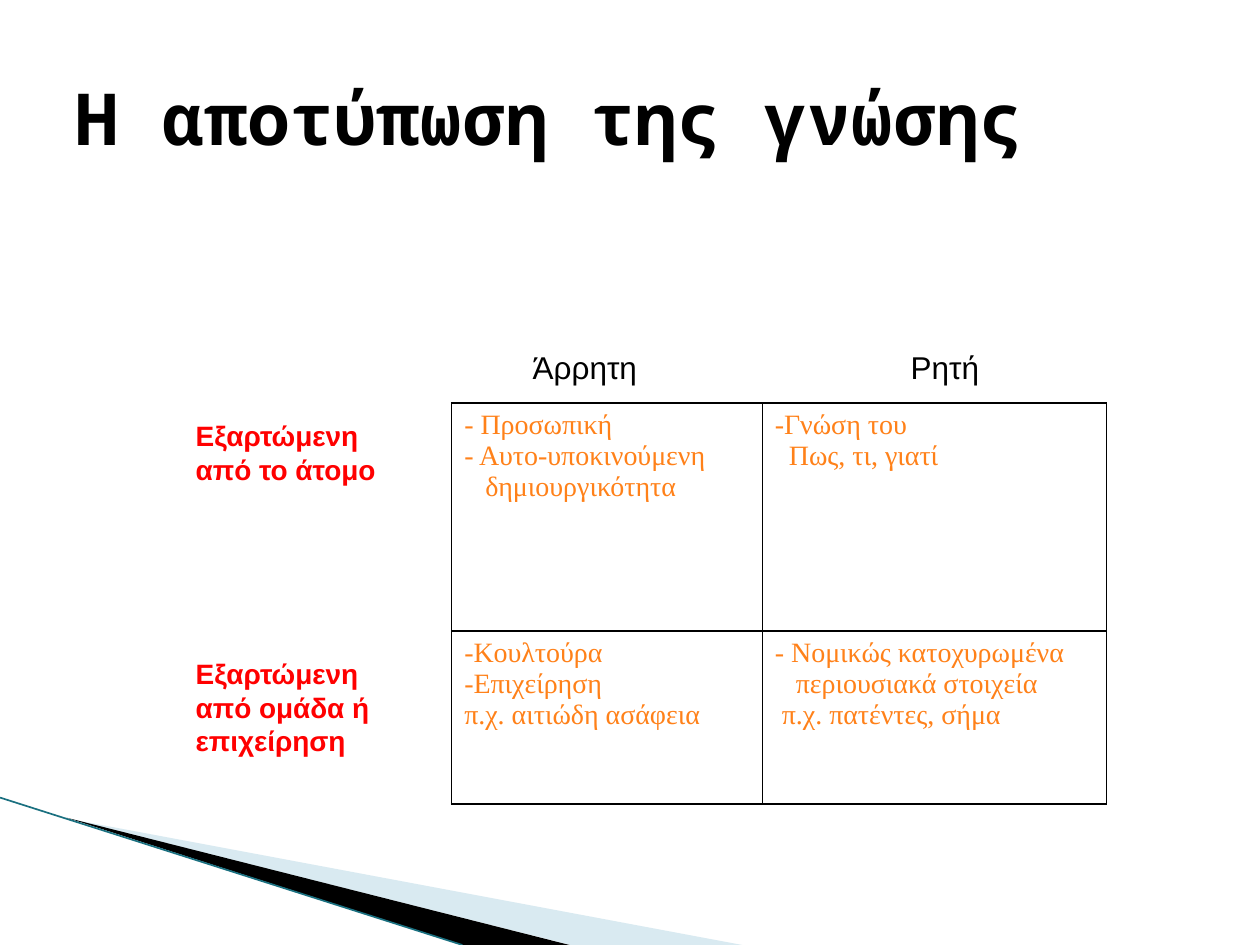
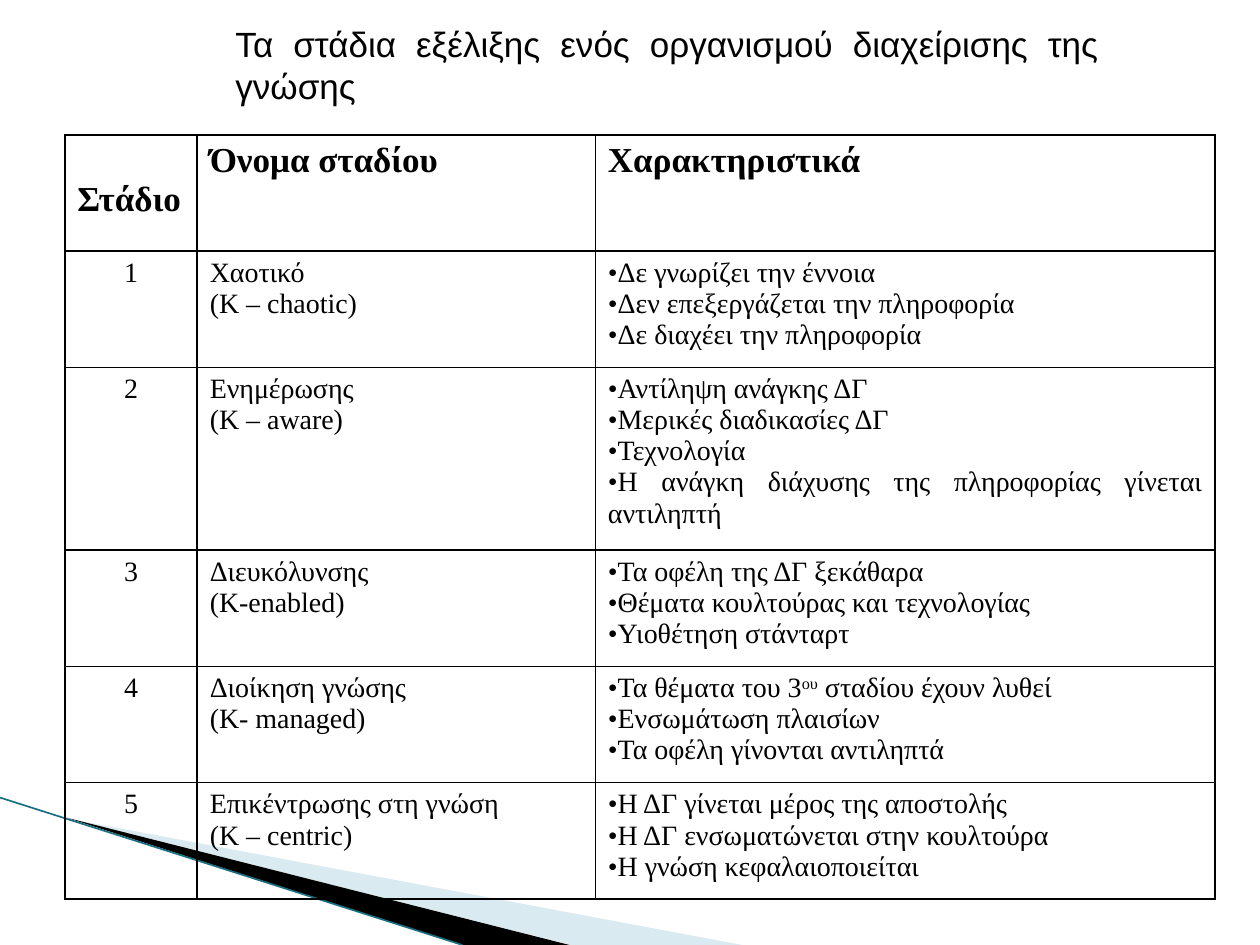
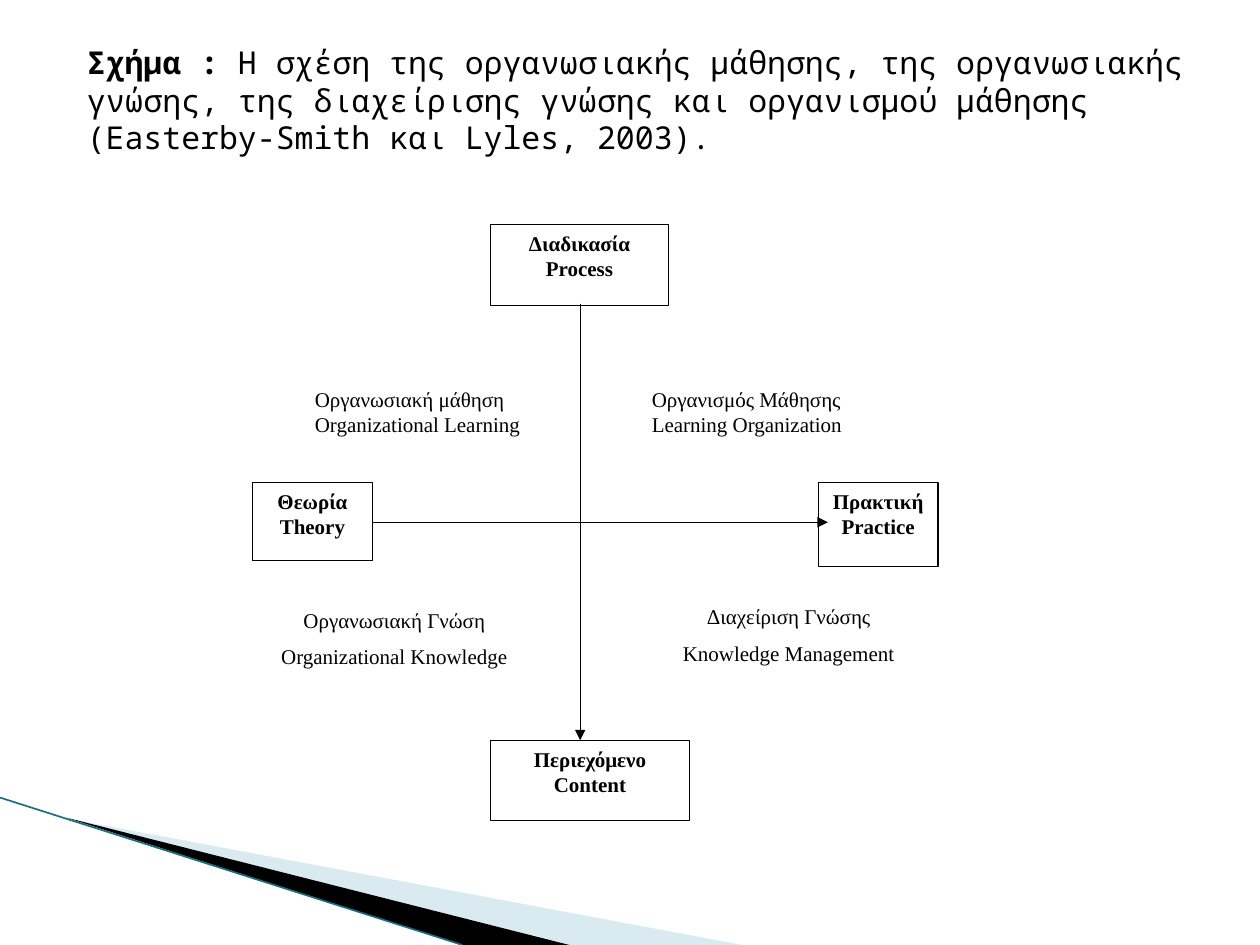
"""Build three slides on recorded knowledge, its stages and its relations."""
from dataclasses import dataclass, replace
from typing import Sequence

from lxml import etree
from pptx import Presentation
from pptx.dml.color import RGBColor
from pptx.enum.shapes import MSO_CONNECTOR, MSO_SHAPE
from pptx.enum.text import MSO_ANCHOR, PP_ALIGN
from pptx.oxml.ns import qn
from pptx.util import Inches, Pt

WIDE, HIGH = Inches(10), Inches(7.5)
COL, ROW = WIDE / 100, HIGH / 75

BLACK = RGBColor(0, 0, 0)
WHITE = RGBColor(255, 255, 255)
RED = RGBColor(255, 0, 0)
ORANGE = RGBColor(0xFF, 0x81, 0x19)
PALE = RGBColor(0xA0, 0xCB, 0xDC)
TEAL = RGBColor(0x1A, 0x70, 0x80)

LEFT, MID, JUST = PP_ALIGN.LEFT, PP_ALIGN.CENTER, PP_ALIGN.JUSTIFY
TOP, CORE, BASE = MSO_ANCHOR.TOP, MSO_ANCHOR.MIDDLE, MSO_ANCHOR.BOTTOM
RECT, STRAIGHT = MSO_SHAPE.RECTANGLE, MSO_CONNECTOR.STRAIGHT
SANS, MONO, SERIF = "Arial", "Noto Sans Mono", "Times New Roman"


@dataclass(frozen=True)
class Look:
    """Font and alignment of a text."""
    size: float
    face: str
    color: RGBColor = BLACK
    bold: bool = False
    align: PP_ALIGN = LEFT


@dataclass(frozen=True)
class Line:
    """One paragraph; text between carets is raised."""
    text: str
    mark: str = ""
    inset: float = 0
    gap: float = 0


@dataclass(frozen=True)
class Area:
    """Place on the grid of 100 columns and 75 rows."""
    x: float
    y: float
    w: float
    h: float

    def emu(self) -> tuple:
        """Give left, top, width and height."""
        return (round(self.x * COL), round(self.y * ROW),
                round(self.w * COL), round(self.h * ROW))


@dataclass(frozen=True)
class Note:
    """Text with its place."""
    area: Area
    lines: tuple
    look: Look
    anchor: MSO_ANCHOR = TOP
    edge: bool = False


HEAD = Look(41, MONO, bold=True)
SIDE = Look(16, SANS, RED, True)
TOPIC = Look(20, SANS, align=JUST)
CELL = Look(16, SERIF, align=JUST)
WARM = replace(CELL, color=ORANGE)
STRONG = replace(CELL, size=20, bold=True)
NODE = Look(12, SERIF, bold=True, align=MID)
PLAIN = Look(12, SERIF)
CENTRED = replace(PLAIN, align=MID)


def write(frame, lines: Sequence[Line], look: Look) -> None:
    """Fill a text frame with paragraphs."""
    for i, line in enumerate(lines):
        par = frame.add_paragraph() if i else frame.paragraphs[0]
        props = par._p.get_or_add_pPr()
        props.set("marL", str(Pt(line.inset)))
        props.set("indent", "0")
        if line.mark:
            etree.SubElement(props, qn("a:buFont")).set("typeface", look.face)
            etree.SubElement(props, qn("a:buChar")).set("char", line.mark)
        par.alignment = look.align
        if line.gap:
            par.space_before = Pt(line.gap)
        font = par.font
        font.size, font.name, font.bold = Pt(look.size), look.face, look.bold
        font.color.rgb = look.color
        for j, part in enumerate(line.text.split("^")):
            run = par.add_run()
            run.text = part
            if line.mark:
                run.font.size, run.font.name = Pt(look.size), look.face
            if j % 2:
                run.font._element.set("baseline", "30000")


def draw(slide, note: Note):
    """Draw a note and return its text frame."""
    if note.edge:
        shape = slide.shapes.add_shape(RECT, *note.area.emu())
        shape.shadow.inherit = False
        shape.fill.solid()
        shape.fill.fore_color.rgb = WHITE
        shape.line.color.rgb = BLACK
        shape.line.width = Pt(0.75)
    else:
        shape = slide.shapes.add_textbox(*note.area.emu())
    frame = shape.text_frame
    frame.word_wrap = True
    frame.vertical_anchor = note.anchor
    write(frame, note.lines, note.look)
    return frame


def link(slide, start: tuple, end: tuple, color: RGBColor, width: float,
         arrow: bool = False) -> None:
    """Draw a straight line between two grid points."""
    (x1, y1), (x2, y2) = start, end
    line = slide.shapes.add_connector(
        STRAIGHT, round(x1 * COL), round(y1 * ROW),
        round(x2 * COL), round(y2 * ROW))
    line.line.color.rgb = color
    line.line.width = Pt(width)
    if arrow:
        tail = etree.SubElement(line.line._get_or_add_ln(), qn("a:tailEnd"))
        tail.set("type", "triangle")
    etree.SubElement(line._element.spPr, qn("a:effectLst"))


def wedge(slide, points: Sequence[tuple], color: RGBColor,
          alpha: int = 100) -> None:
    """Draw a filled outline through grid points."""
    spots = [(round(x * COL), round(y * ROW)) for x, y in points]
    pen = slide.shapes.build_freeform(*spots[0])
    pen.add_line_segments(spots[1:])
    shape = pen.convert_to_shape()
    shape.shadow.inherit = False
    shape.fill.solid()
    shape.fill.fore_color.rgb = color
    shape.line.fill.background()
    if alpha < 100:
        tone = shape._element.spPr.find(f".//{qn('a:srgbClr')}")
        etree.SubElement(tone, qn("a:alpha")).set("val", str(alpha * 1000))


def page(deck):
    """Add a blank slide with the corner sweep."""
    slide = deck.slides.add_slide(deck.slide_layouts[6])
    wedge(slide, [(5.5, 65), (58.9, 75), (45.3, 75)], PALE, 40)
    wedge(slide, [(5.3, 64.9), (45.2, 75), (36.7, 75)], BLACK)
    link(slide, (0, 63.3), (36.7, 75), TEAL, 0.95)
    return slide


def rule(cell) -> None:
    """Clear the fill of a cell and line its four sides."""
    props = cell._tc.get_or_add_tcPr()
    for side in ("lnL", "lnR", "lnT", "lnB"):
        edge = etree.SubElement(props, qn(f"a:{side}"), w=str(Pt(1)))
        fill = etree.SubElement(edge, qn("a:solidFill"))
        etree.SubElement(fill, qn("a:srgbClr"), val=str(BLACK))
    cell.fill.background()


def grid(slide, x: float, y: float, cols: Sequence[float],
         rows: Sequence[float]):
    """Add a plain ruled table."""
    area = Area(x, y, sum(cols), sum(rows))
    table = slide.shapes.add_table(len(rows), len(cols), *area.emu()).table
    table.first_row = table.horz_banding = False
    for col, size in zip(table.columns, cols):
        col.width = round(size * COL)
    for row, size in zip(table.rows, rows):
        row.height = round(size * ROW)
    for cell in table.iter_cells():
        rule(cell)
    return table


def lines(*texts: str, mark: str = "") -> tuple:
    """Turn texts into paragraphs of one kind."""
    return tuple(Line(text, mark) for text in texts)


KINDS = (
    (lines("- Προσωπική", "- Αυτο-υποκινούμενη")
     + (Line("δημιουργικότητα", inset=12),),
     (Line("Γνώση του", "-"), Line("Πως, τι, γιατί", inset=8))),
    (lines("Κουλτούρα", "Επιχείρηση", mark="-")
     + lines("π.χ. αιτιώδη ασάφεια"),
     (Line("- Νομικώς κατοχυρωμένα"),
      Line("περιουσιακά στοιχεία", inset=12),
      Line("π.χ. πατέντες, σήμα", inset=4))),
)

STAGES = (
    (("Χαοτικό", "(K – chaotic)"),
     ("Δε γνωρίζει την έννοια", "Δεν επεξεργάζεται την πληροφορία",
      "Δε διαχέει την πληροφορία")),
    (("Ενημέρωσης", "(K – aware)"),
     ("Αντίληψη ανάγκης ΔΓ", "Μερικές διαδικασίες ΔΓ", "Τεχνολογία",
      "Η ανάγκη διάχυσης της πληροφορίας γίνεται αντιληπτή")),
    (("Διευκόλυνσης", "(K-enabled)"),
     ("Τα οφέλη της ΔΓ ξεκάθαρα", "Θέματα κουλτούρας και τεχνολογίας",
      "Υιοθέτηση στάνταρτ")),
    (("Διοίκηση γνώσης", "(K- managed)"),
     ("Τα θέματα του 3^ου^ σταδίου έχουν λυθεί", "Ενσωμάτωση πλαισίων",
      "Τα οφέλη γίνονται αντιληπτά")),
    (("Επικέντρωσης στη γνώση", "(K – centric)"),
     ("Η ΔΓ γίνεται μέρος της αποστολής",
      "Η ΔΓ ενσωματώνεται στην κουλτούρα", "Η γνώση κεφαλαιοποιείται")),
)

POLES = (
    (Area(38.95, 17.8, 14.1, 6.45), ("Διαδικασία", "Process")),
    (Area(64.95, 38.3, 9.5, 6.65), ("Πρακτική", "Practice")),
    (Area(20.05, 38.3, 9.5, 6.2), ("Θεωρία", "Theory")),
    (Area(38.95, 58.75, 15.75, 6.4), ("Περιεχόμενο", "Content")),
)

FIELDS = (
    Note(Area(24, 28.45, 18.8, 6.7),
         lines("Οργανωσιακή μάθηση", "Organizational Learning"), PLAIN, BASE),
    Note(Area(50.75, 28.45, 17.7, 6.7),
         lines("Οργανισμός Μάθησης", "Learning Organization"), PLAIN, BASE),
    Note(Area(20.85, 47.7, 20.9, 6),
         (Line("Οργανωσιακή Γνώση"),
          Line("Organizational Knowledge", gap=6.5)), CENTRED),
    Note(Area(52.8, 47.45, 19.6, 6),
         (Line("Διαχείριση Γνώσης"),
          Line("Knowledge Management", gap=6.5)), CENTRED),
)


def kinds(deck) -> None:
    """Show tacit and explicit knowledge."""
    slide = page(deck)
    draw(slide, Note(Area(5, 3, 90, 12.5), lines("Η αποτύπωση της γνώσης"),
                     HEAD, CORE))
    draw(slide, Note(Area(14.55, 32.75, 18.1, 31.5),
                     (Line("Εξαρτώμενη από το άτομο"),
                      Line("Εξαρτώμενη από ομάδα ή επιχείρηση", gap=97.4)),
                     SIDE))
    for x, text in ((41.3, "Άρρητη"), (71.3, "Ρητή")):
        draw(slide, Note(Area(x, 27.1, 15, 4), lines(text), Look(18, SANS)))
    table = grid(slide, 35.85, 32, (24.65, 27.3), (18.1, 13.7))
    for i, row in enumerate(KINDS):
        for j, texts in enumerate(row):
            write(table.cell(i, j).text_frame, texts, WARM)


def stages(deck) -> None:
    """List the stages of an organisation."""
    slide = page(deck)
    draw(slide, Note(
        Area(17.7, 3, 70.5, 4.3),
        lines("Τα στάδια εξέλιξης ενός οργανισμού διαχείρισης της γνώσης"),
        TOPIC, CORE))
    table = grid(slide, 5.15, 10.7, (10.5, 31.6, 49.2),
                 (9.23, 9.23, 14.5, 9.23, 9.23, 9.23))
    for j, text in enumerate(("Στάδιο", "Όνομα σταδίου", "Χαρακτηριστικά")):
        write(table.cell(0, j).text_frame, lines(text), STRONG)
    table.cell(0, 0).margin_top = round(3.6 * ROW)
    for i, (name, traits) in enumerate(STAGES, 1):
        write(table.cell(i, 0).text_frame, lines(str(i)),
              replace(CELL, align=MID))
        write(table.cell(i, 1).text_frame, lines(*name), CELL)
        write(table.cell(i, 2).text_frame, lines(*traits, mark="•"), CELL)


def fields(deck) -> None:
    """Draw the four fields between theory and practice."""
    slide = page(deck)
    for area, texts in POLES:
        draw(slide, Note(area, lines(*texts), NODE, edge=True))
    link(slide, (46.05, 24.1), (46.05, 58.75), BLACK, 0.75, True)
    link(slide, (29.5, 41.45), (65.7, 41.45), BLACK, 0.75, True)
    for note in FIELDS:
        draw(slide, note)
    frame = draw(slide, Note(Area(5.9, 4.4, 94.1, 7), lines("Σχήμα : "),
                             Look(18, MONO), CORE))
    par = frame.paragraphs[0]
    par.runs[0].font.bold = True
    par.add_run().text = (
        "Η σχέση της οργανωσιακής μάθησης, της οργανωσιακής γνώσης, "
        "της διαχείρισης γνώσης και οργανισμού μάθησης "
        "(Easterby-Smith και Lyles, 2003).")


def main() -> None:
    """Build and save the deck."""
    deck = Presentation()
    deck.slide_width, deck.slide_height = WIDE, HIGH
    for build in (kinds, stages, fields):
        build(deck)
    deck.save("out.pptx")


if __name__ == "__main__":
    main()
